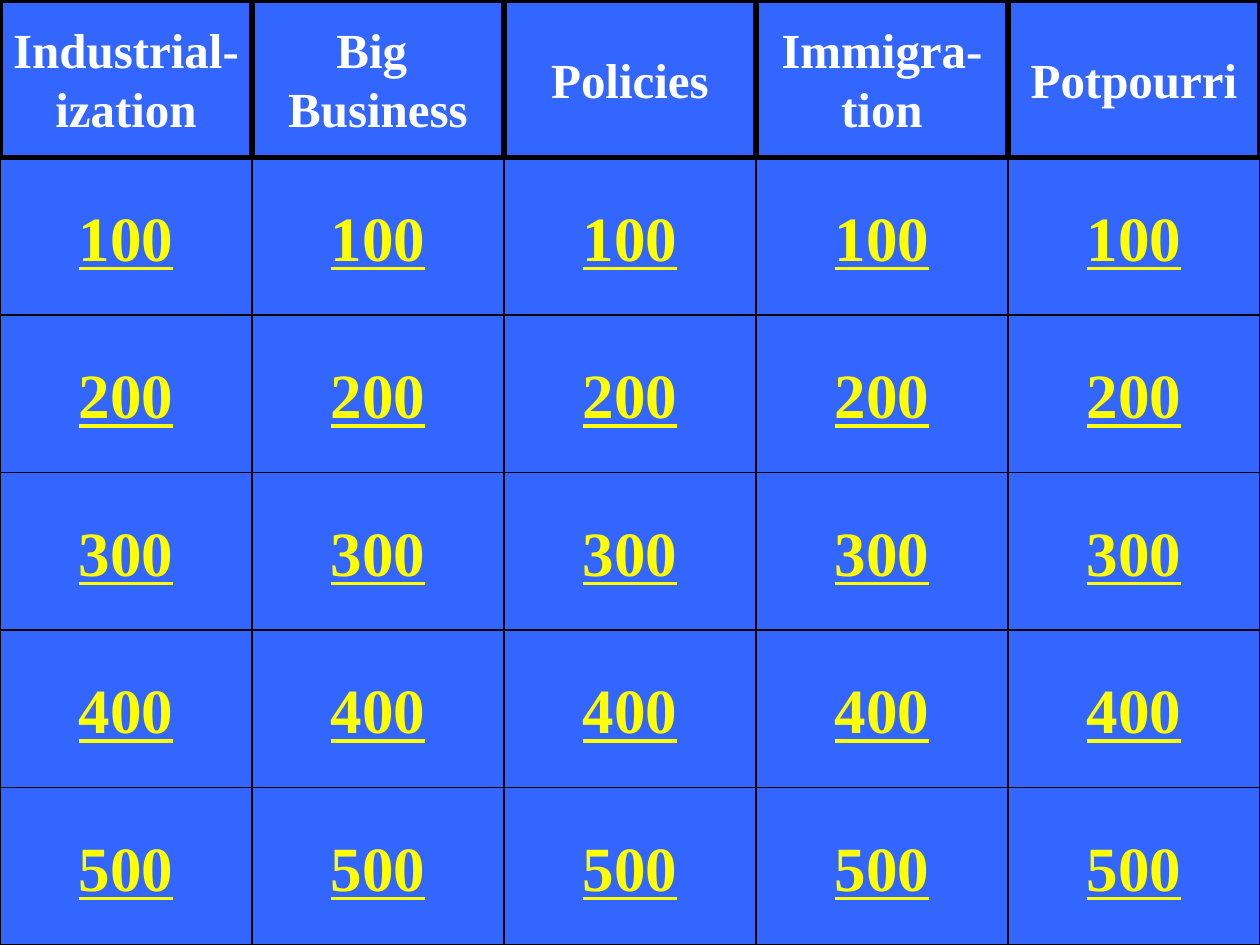
from dataclasses import dataclass

from pptx import Presentation
from pptx.dml.color import RGBColor
from pptx.enum.shapes import MSO_SHAPE
from pptx.enum.text import MSO_ANCHOR, PP_ALIGN
from pptx.util import Inches, Pt

HEADING_SHAPE = MSO_SHAPE.RECTANGLE
BUTTON_SHAPE = MSO_SHAPE.ACTION_BUTTON_CUSTOM
MIDDLE = MSO_ANCHOR.MIDDLE
CENTER = PP_ALIGN.CENTER

SLIDE_WIDTH, SLIDE_HEIGHT = 10, 7.5
CATEGORIES = [
    ["Industrial-", "ization"],
    ["Big ", "Business"],
    ["Policies"],
    ["Immigra-", "tion"],
    ["Potpourri"],
]
POINTS = [100, 200, 300, 400, 500]


@dataclass(frozen=True)
class Theme:
    font: str = "Times New Roman"
    board: RGBColor = RGBColor(0x33, 0x66, 0xFF)
    border: RGBColor = RGBColor(0x00, 0x00, 0x00)
    heading: RGBColor = RGBColor(0xFF, 0xFF, 0xFF)
    points: RGBColor = RGBColor(0xFF, 0xFF, 0x00)
    heading_size: float = 28
    points_size: float = 36
    heading_border: float = 3
    points_border: float = 0.75


class QuizBoard:
    def __init__(self, slide, theme):
        self.slide = slide
        self.theme = theme
        self.cell_width = SLIDE_WIDTH / len(CATEGORIES)
        self.cell_height = SLIDE_HEIGHT / (len(POINTS) + 1)

    def background(self):
        fill = self.slide.background.fill
        fill.solid()
        fill.fore_color.rgb = self.theme.board

    def cell(self, column, row, preset, lines, border, size, color, underline=None):
        """Draw one board cell, with one paragraph for each line of text."""
        cell = self.slide.shapes.add_shape(
            preset,
            Inches(column * self.cell_width),
            Inches(row * self.cell_height),
            Inches(self.cell_width),
            Inches(self.cell_height),
        )
        cell.shadow.inherit = False
        cell.fill.solid()
        cell.fill.fore_color.rgb = self.theme.board
        cell.line.color.rgb = self.theme.border
        cell.line.width = Pt(border)

        frame = cell.text_frame
        frame.word_wrap = False
        frame.vertical_anchor = MIDDLE
        frame.text = "\n".join(lines)
        for paragraph in frame.paragraphs:
            paragraph.alignment = CENTER
            font = paragraph.font
            font.name = self.theme.font
            font.size = Pt(size)
            font.bold = True
            font.underline = underline
            font.color.rgb = color

    def heading(self, column, lines):
        theme = self.theme
        self.cell(column, 0, HEADING_SHAPE, lines, theme.heading_border,
                  theme.heading_size, theme.heading)

    def points_button(self, column, row, points):
        theme = self.theme
        self.cell(column, row, BUTTON_SHAPE, [str(points)], theme.points_border,
                  theme.points_size, theme.points, underline=True)


def main():
    presentation = Presentation()
    presentation.slide_width = Inches(SLIDE_WIDTH)
    presentation.slide_height = Inches(SLIDE_HEIGHT)
    blank_layout = presentation.slide_layouts[6]
    board = QuizBoard(presentation.slides.add_slide(blank_layout), Theme())

    board.background()
    for column in range(len(CATEGORIES)):
        for row, points in enumerate(POINTS, start=1):
            board.points_button(column, row, points)
    for column, lines in enumerate(CATEGORIES):
        board.heading(column, lines)
    presentation.save("out.pptx")


if __name__ == "__main__":
    main()
